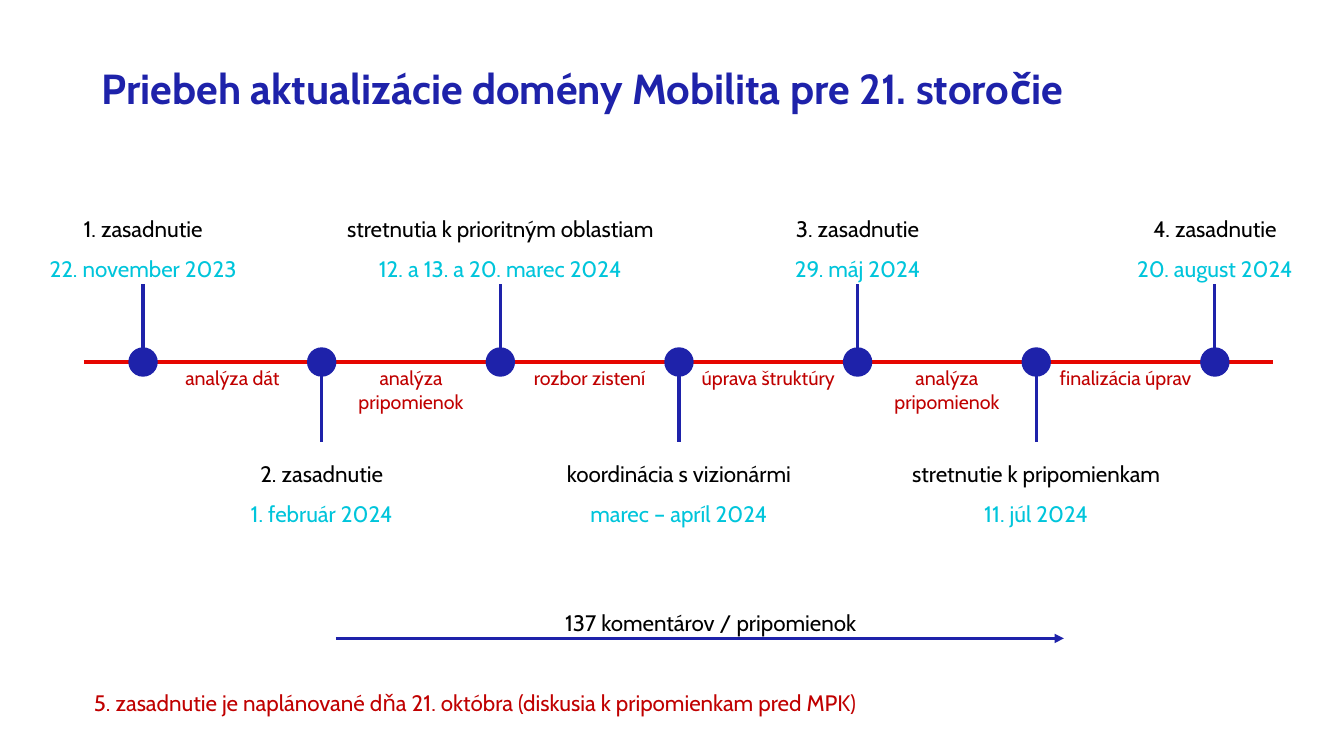
import pptx
import pptx.dml.color
import pptx.enum.shapes
import pptx.enum.text
import pptx.oxml.ns
import pptx.util
from lxml import etree

Pt = pptx.util.Pt
RGBColor = pptx.dml.color.RGBColor
ALIGN = pptx.enum.text.PP_ALIGN

NAVY = RGBColor(0x1E, 0x22, 0xAA)
CYAN = RGBColor(0x00, 0xC5, 0xDB)
RED = RGBColor(0xE6, 0x06, 0x00)
DARK_RED = RGBColor(0xC0, 0x00, 0x00)
BLACK = RGBColor(0x00, 0x00, 0x00)

FIRST_NODE_X, NODE_STEP = 102.2, 127.6
AXIS_Y, NODE_RADIUS = 258.6, 10
UPPER_LABEL_TOP, LOWER_LABEL_TOP, LABEL_HEIGHT = 140.4, 315.4, 62.6
STEP_WIDTH = 131

# Meetings alternate above and below the axis: title, date, label width
MEETINGS = [
    ("1. zasadnutie", "22. november 2023", 186),
    ("2. zasadnutie", "1. február 2024", 186),
    ("stretnutia k prioritným oblastiam", "12. a 13. a 20. marec 2024", 246),
    ("koordinácia s vizionármi", "marec – apríl 2024", 206),
    ("3. zasadnutie", "29. máj 2024", 186),
    ("stretnutie k pripomienkam", "11. júl 2024", 194),
    ("4. zasadnutie", "20. august 2024", 184),
]

# Work between neighbouring meetings: text, box height
STEPS = [
    ("analýza dát", 24.2),
    ("analýza pripomienok", 41),
    ("rozbor zistení", 24.2),
    ("úprava štruktúry", 24.2),
    ("analýza pripomienok", 41),
    ("finalizácia úprav", 24.2),
]


class TimelineSlide:
    font = "Cabin"
    line_width = 2.25

    def __init__(self, slide):
        self.shapes = slide.shapes

    def text(self, left, top, width, height, lines, size=16,
             align=ALIGN.CENTER, spacing=1.5, bold=False):
        """Add a text box; lines holds (text, colour) pairs."""
        frame = self.shapes.add_textbox(
            Pt(left), Pt(top), Pt(width), Pt(height)).text_frame
        frame.word_wrap = True
        frame.text = "\n".join(words for words, _ in lines)
        for paragraph, (_, colour) in zip(frame.paragraphs, lines):
            paragraph.alignment = align
            paragraph.line_spacing = spacing
            for run in paragraph.runs:
                run.font.name = self.font
                run.font.size = Pt(size)
                run.font.bold = bold
                run.font.color.rgb = colour

    def line(self, x1, y1, x2, y2, colour=NAVY, arrow=False):
        connector = self.shapes.add_connector(
            pptx.enum.shapes.MSO_CONNECTOR.STRAIGHT,
            Pt(x1), Pt(y1), Pt(x2), Pt(y2))
        connector.line.color.rgb = colour
        connector.line.width = Pt(self.line_width)
        qn = pptx.oxml.ns.qn
        if arrow:
            outline = connector.line._get_or_add_ln()
            etree.SubElement(outline, qn("a:tailEnd"), type="triangle")
        etree.SubElement(connector._element.spPr, qn("a:effectLst"))

    def node(self, x, y):
        dot = self.shapes.add_shape(
            pptx.enum.shapes.MSO_SHAPE.OVAL,
            Pt(x - NODE_RADIUS), Pt(y - NODE_RADIUS),
            Pt(2 * NODE_RADIUS), Pt(2 * NODE_RADIUS))
        dot.shadow.inherit = False
        dot.fill.solid()
        dot.fill.fore_color.rgb = NAVY
        dot.line.color.rgb = NAVY
        dot.line.width = Pt(1)

    def meeting(self, x, above, title, date, width):
        """Add a node with its stem and label above or below the axis."""
        self.node(x, AXIS_Y)
        if above:
            label_top = UPPER_LABEL_TOP
            self.line(x, AXIS_Y - NODE_RADIUS, x, label_top + LABEL_HEIGHT)
        else:
            label_top = LOWER_LABEL_TOP
            self.line(x, label_top, x, AXIS_Y + NODE_RADIUS)
        self.text(x - width / 2, label_top, width, LABEL_HEIGHT,
                  [(title, BLACK), (date, CYAN)])


def main():
    presentation = pptx.Presentation()
    presentation.slide_width = Pt(960)
    presentation.slide_height = Pt(540)
    timeline = TimelineSlide(
        presentation.slides.add_slide(presentation.slide_layouts[6]))

    timeline.text(65.6, 45.5, 731.5, 46,
                  [("Priebeh aktualizácie domény Mobilita pre 21. storočie", NAVY)],
                  size=30, align=ALIGN.LEFT, spacing=0.9, bold=True)

    timeline.line(60, AXIS_Y, 909.4, AXIS_Y, colour=RED)
    for index, meeting in enumerate(MEETINGS):
        timeline.meeting(FIRST_NODE_X + index * NODE_STEP, index % 2 == 0, *meeting)
    for index, (step, height) in enumerate(STEPS):
        middle = FIRST_NODE_X + (index + 0.5) * NODE_STEP
        timeline.text(middle - STEP_WIDTH / 2, 258, STEP_WIDTH, height,
                      [(step, DARK_RED)], size=14, spacing=1.0)

    timeline.line(240, 456, 760, 456, arrow=True)
    timeline.text(265.7, 422, 484, 33, [("137 komentárov / pripomienok", BLACK)])
    timeline.text(60, 479, 811, 33,
                  [("5. zasadnutie je naplánované dňa 21. októbra "
                    "(diskusia k pripomienkam pred MPK)", DARK_RED)],
                  align=ALIGN.LEFT)

    presentation.save("out.pptx")


if __name__ == "__main__":
    main()
